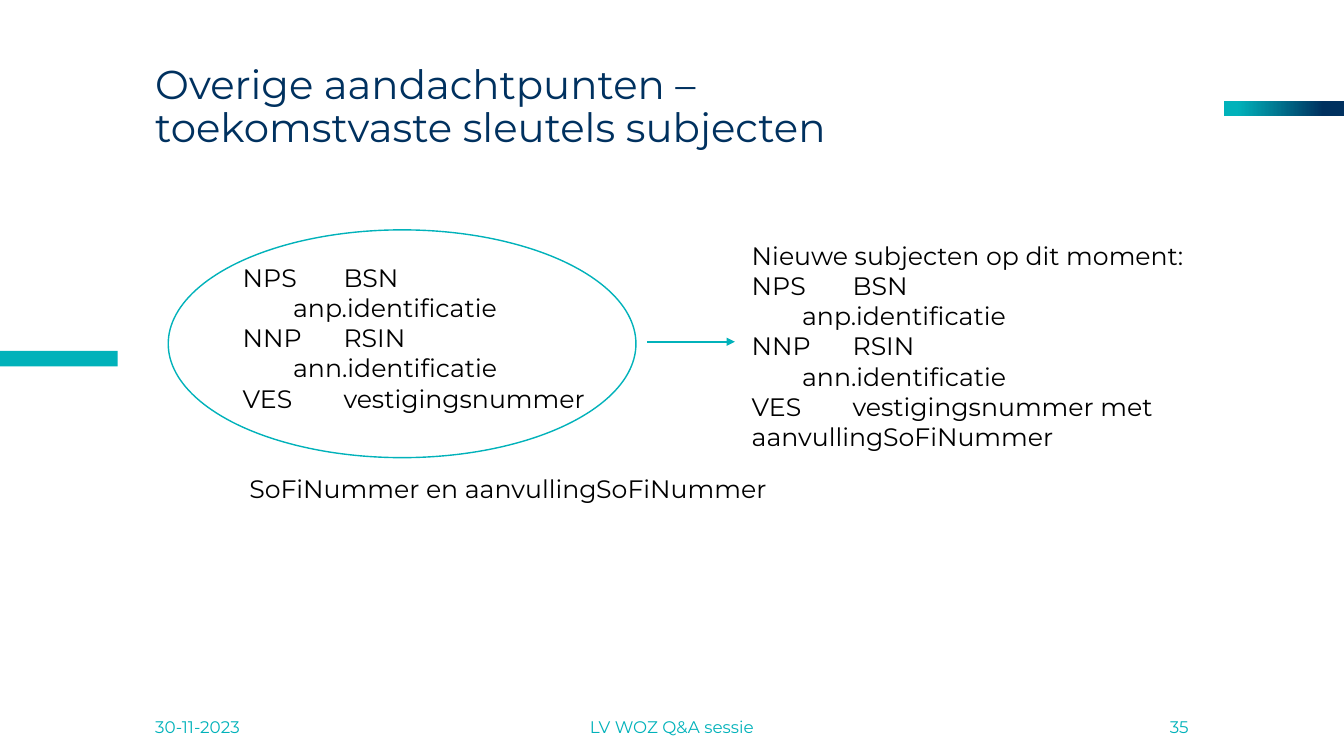
from dataclasses import dataclass
from typing import NamedTuple

from lxml.etree import SubElement
from pptx import Presentation
from pptx.dml.color import RGBColor
from pptx.enum.shapes import MSO_CONNECTOR as Conn, MSO_SHAPE as Geo
from pptx.enum.text import MSO_ANCHOR as Anchor, MSO_AUTO_SIZE as Fit, PP_ALIGN as Align
from pptx.oxml.ns import qn
from pptx.shapes.autoshape import Shape
from pptx.slide import Slide
from pptx.text.text import TextFrame
from pptx.util import Pt


@dataclass(frozen=True)
class Theme:
    font: str = "Montserrat"
    teal: RGBColor = RGBColor(0x01, 0xB2, 0xBA)
    navy: RGBColor = RGBColor(0x00, 0x31, 0x5F)
    black: RGBColor = RGBColor(0, 0, 0)
    white: RGBColor = RGBColor(255, 255, 255)
    title: float = 28.8
    body: float = 18
    footer: float = 12


class Box(NamedTuple):
    left: float
    top: float
    width: float
    height: float


@dataclass(frozen=True)
class Label:
    box: Box
    lines: tuple[str, ...]
    size: float
    color: RGBColor
    align: Align = Align.LEFT
    anchor: Anchor = Anchor.TOP
    last_gap: float = 0


T = Theme()
KEYS = ("NPS\tBSN", "\tanp.identificatie", "NNP\tRSIN", "\tann.identificatie")
FOOTER_TOP, FOOTER_HEIGHT = 508.3, 22.3


def footer(left: float, width: float, text: str, align: Align) -> Label:
    box = Box(left, FOOTER_TOP, width, FOOTER_HEIGHT)
    return Label(box, (text,), T.footer, T.teal, align, Anchor.MIDDLE)


LABELS = (
    footer(103.7, 87.1, "30-11-2023", Align.LEFT),
    footer(218.9, 522, "LV WOZ Q&A sessie", Align.CENTER),
    footer(769, 87.1, "35", Align.RIGHT),
    Label(Box(166.3, 183.6, 535.7, 181.4),
          KEYS + ("VES \tvestigingsnummer", " SoFiNummer en aanvullingSoFiNummer"),
          T.body, T.black, last_gap=43),
    Label(Box(529.9, 167.8, 349.9, 159.8),
          ("Nieuwe subjecten op dit moment:",) + KEYS
          + ("VES \tvestigingsnummer met \taanvullingSoFiNummer",),
          T.body, T.black),
)


def pts(values: tuple[float, ...]) -> list[Pt]:
    return [Pt(v) for v in values]


def style(tf: TextFrame, size: float, color: RGBColor, align: Align) -> None:
    for p in tf.paragraphs:
        p.alignment = align
        for r in p.runs:
            r.font.name, r.font.size = T.font, Pt(size)
            r.font.color.rgb = color


def add_shape(s: Slide, geo: Geo, box: Box, fill: RGBColor) -> Shape:
    sp = s.shapes.add_shape(geo, *pts(box))
    sp.shadow.inherit = False
    sp.fill.solid()
    sp.fill.fore_color.rgb = fill
    sp.line.fill.background()
    return sp


def add_label(s: Slide, label: Label) -> None:
    tf = s.shapes.add_textbox(*pts(label.box)).text_frame
    tf.word_wrap = True
    tf.vertical_anchor = label.anchor
    tf.text = "\n".join(label.lines)
    tf.paragraphs[-1].space_before = Pt(label.last_gap)
    style(tf, label.size, label.color, label.align)


def add_title(s: Slide, box: Box, text: str) -> None:
    sp = s.shapes.title
    sp.left, sp.top, sp.width, sp.height = pts(box)
    tf = sp.text_frame
    tf.auto_size, tf.word_wrap = Fit.NONE, True
    tf.vertical_anchor = Anchor.MIDDLE
    tf.margin_right = Pt(25.2)
    p = tf.paragraphs[0]
    p.text = text
    p.line_spacing = 0.9
    p.space_before = Pt(0)
    style(tf, T.title, T.navy, Align.LEFT)


def add_arrow(s: Slide, x1: float, x2: float, y: float) -> None:
    line = s.shapes.add_connector(Conn.STRAIGHT, *pts((x1, y, x2, y)))
    line.line.color.rgb = T.teal
    line.line.width = Pt(1.5)
    SubElement(line.line._get_or_add_ln(), qn("a:tailEnd"), type="triangle")
    SubElement(line._element.spPr, qn("a:effectLst"))


def add_accents(s: Slide) -> None:
    bar = add_shape(s, Geo.RECTANGLE, Box(874.1, 72, 85.9, 10.8), T.teal)
    bar.fill.gradient()
    bar.fill.gradient_angle = 0
    stops = ((0.11, T.teal), (0.83, T.navy))
    for stop, (position, color) in zip(bar.fill.gradient_stops, stops):
        stop.position = position
        stop.color.rgb = color
    add_shape(s, Geo.RECTANGLE, Box(0, 250.6, 84, 11.2), T.teal)


def main() -> None:
    prs = Presentation()
    prs.slide_width, prs.slide_height = Pt(960), Pt(540)
    s = prs.slides.add_slide(prs.slide_layouts[5])
    add_accents(s)
    add_title(s, Box(103.7, 40.3, 752.4, 73.4),
              "Overige aandachtpunten – \ntoekomstvaste sleutels subjecten")
    ellipse = add_shape(s, Geo.OVAL, Box(120.2, 164.2, 334.1, 162.7), T.white)
    ellipse.line.color.rgb = T.teal
    ellipse.line.width = Pt(1)
    for label in LABELS:
        add_label(s, label)
    add_arrow(s, 462.2, 524.9, 244.1)
    prs.save("out.pptx")


if __name__ == "__main__":
    main()
